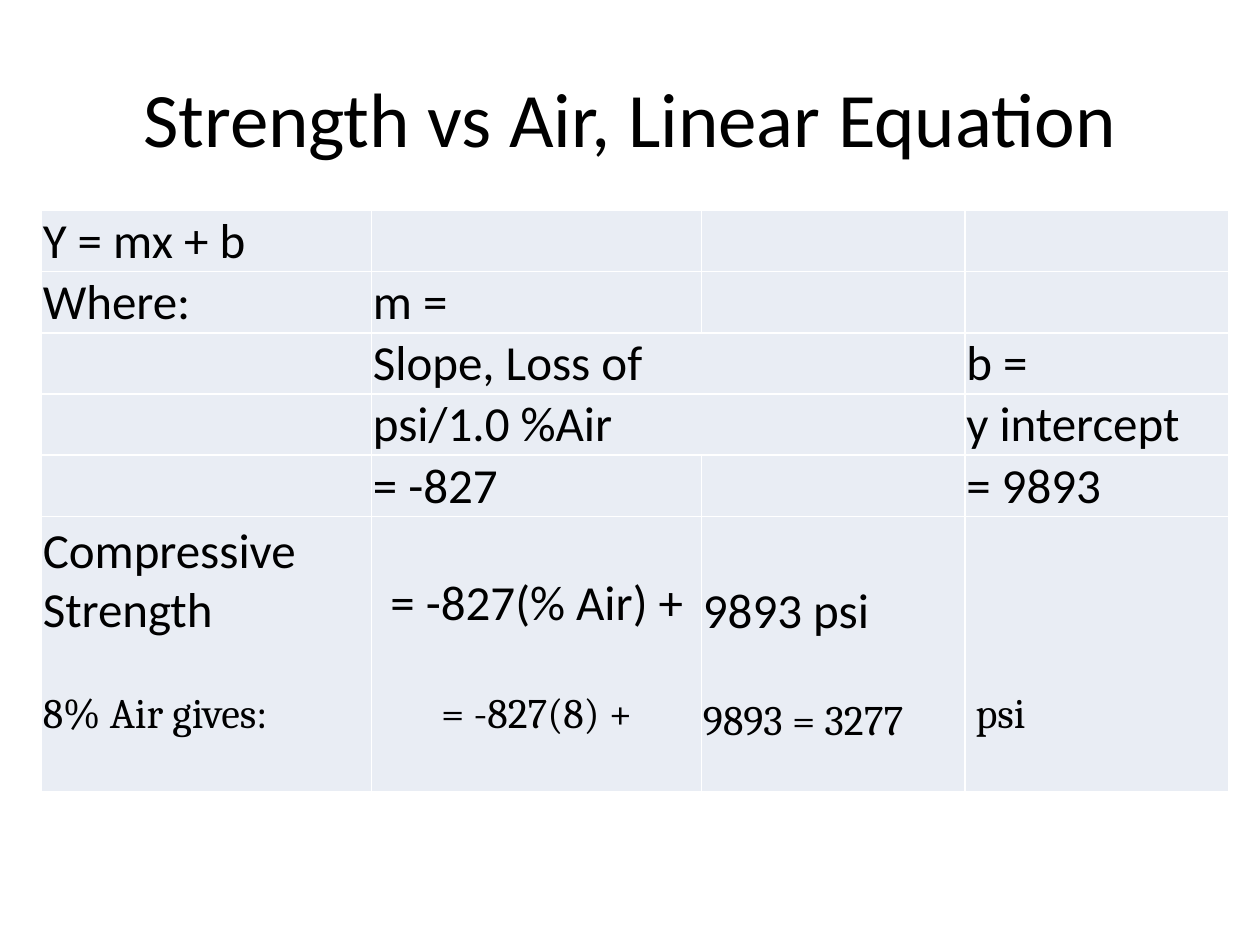
from pptx import Presentation
from pptx.dml.color import RGBColor
from pptx.enum.text import MSO_ANCHOR, PP_ALIGN
from pptx.util import Inches, Pt

BLACK = RGBColor(0x00, 0x00, 0x00)
CELL_FILL = RGBColor(0xE9, 0xED, 0xF4)
LEFT, CENTER = PP_ALIGN.LEFT, PP_ALIGN.CENTER
MIDDLE, BOTTOM = MSO_ANCHOR.MIDDLE, MSO_ANCHOR.BOTTOM
TITLE_ONLY = 5

COLUMN_WIDTHS = [2.62, 2.62, 2.09, 2.09]
ROW_HEIGHTS = [0.48] * 5 + [2.17]
DEFINITIONS = [
    ["Y = mx + b", "", "", ""],
    ["Where:", "m =", "", ""],
    ["", "Slope, Loss of", "", "b ="],
    ["", "psi/1.0 %Air", "", "y intercept"],
    ["", "= -827", "", "= 9893"],
]
MERGED_ROWS = [2, 3]
# Each entry: formula, worked example, alignment, gap in points, bottom inset in inches
RESULTS = [
    ("Compressive Strength", "8% Air gives:", LEFT, 28, 0.42),
    ("= -827(% Air) +", "= -827(8) +", CENTER, 32, 0.42),
    ("9893 psi", "9893 = 3277", LEFT, 32, 0.36),
    ("", " psi", LEFT, 0, 0.42),
]


def style_paragraph(paragraph, text, font_name, size, alignment=LEFT):
    """Write one line of text in a single font."""
    paragraph.text = text
    paragraph.alignment = alignment
    paragraph.font.name = font_name
    paragraph.font.size = Pt(size)
    paragraph.font.color.rgb = BLACK


def inset_cell(cell, bottom=0):
    """Anchor a cell's text at the bottom with thin margins."""
    cell.vertical_anchor = BOTTOM
    cell.margin_left = cell.margin_right = cell.margin_top = Inches(0.01)
    cell.margin_bottom = Inches(bottom)


def add_title(slide, left, top, width, height):
    """Place the slide title in its placeholder."""
    title = slide.shapes.title
    title.left, title.top = Inches(left), Inches(top)
    title.width, title.height = Inches(width), Inches(height)
    title.text_frame.vertical_anchor = MIDDLE
    style_paragraph(title.text_frame.paragraphs[0],
                    "Strength vs Air, Linear Equation", "Calibri", 44, CENTER)


def fill_result_cell(cell, formula, example, alignment, gap, bottom):
    """Write a formula with its worked example below."""
    inset_cell(cell, bottom)
    paragraph = cell.text_frame.paragraphs[0]
    if formula:
        style_paragraph(paragraph, formula, "Calibri", 28, alignment)
        paragraph = cell.text_frame.add_paragraph()
        paragraph.space_before = Pt(gap)
    style_paragraph(paragraph, example, "Cambria", 24, alignment)


def add_equation_table(slide, left, top, width, height):
    """Build the table that derives strength from air content."""
    table = slide.shapes.add_table(
        len(ROW_HEIGHTS), len(COLUMN_WIDTHS),
        Inches(left), Inches(top), Inches(width), Inches(height)).table
    table.first_row = table.horz_banding = False
    for column, share in zip(table.columns, COLUMN_WIDTHS):
        column.width = Inches(width * share / sum(COLUMN_WIDTHS))
    for row, share in zip(table.rows, ROW_HEIGHTS):
        row.height = Inches(height * share / sum(ROW_HEIGHTS))
    for cell in table.iter_cells():
        cell.fill.solid()
        cell.fill.fore_color.rgb = CELL_FILL
    for row_index in MERGED_ROWS:
        table.cell(row_index, 1).merge(table.cell(row_index, 2))
    for row_index, texts in enumerate(DEFINITIONS):
        for column_index, text in enumerate(texts):
            if text:
                cell = table.cell(row_index, column_index)
                inset_cell(cell)
                style_paragraph(cell.text_frame.paragraphs[0], text, "Calibri", 28)
    for column_index, result in enumerate(RESULTS):
        fill_result_cell(table.cell(len(DEFINITIONS), column_index), *result)


def main():
    """Create the presentation and save it."""
    presentation = Presentation()
    presentation.slide_width, presentation.slide_height = Inches(10), Inches(7.5)
    slide = presentation.slides.add_slide(presentation.slide_layouts[TITLE_ONLY])
    add_title(slide, 0.5, 0.3, 9, 1.25)
    add_equation_table(slide, 0.33, 1.67, 9.42, 4.6)
    presentation.save("out.pptx")


if __name__ == "__main__":
    main()
